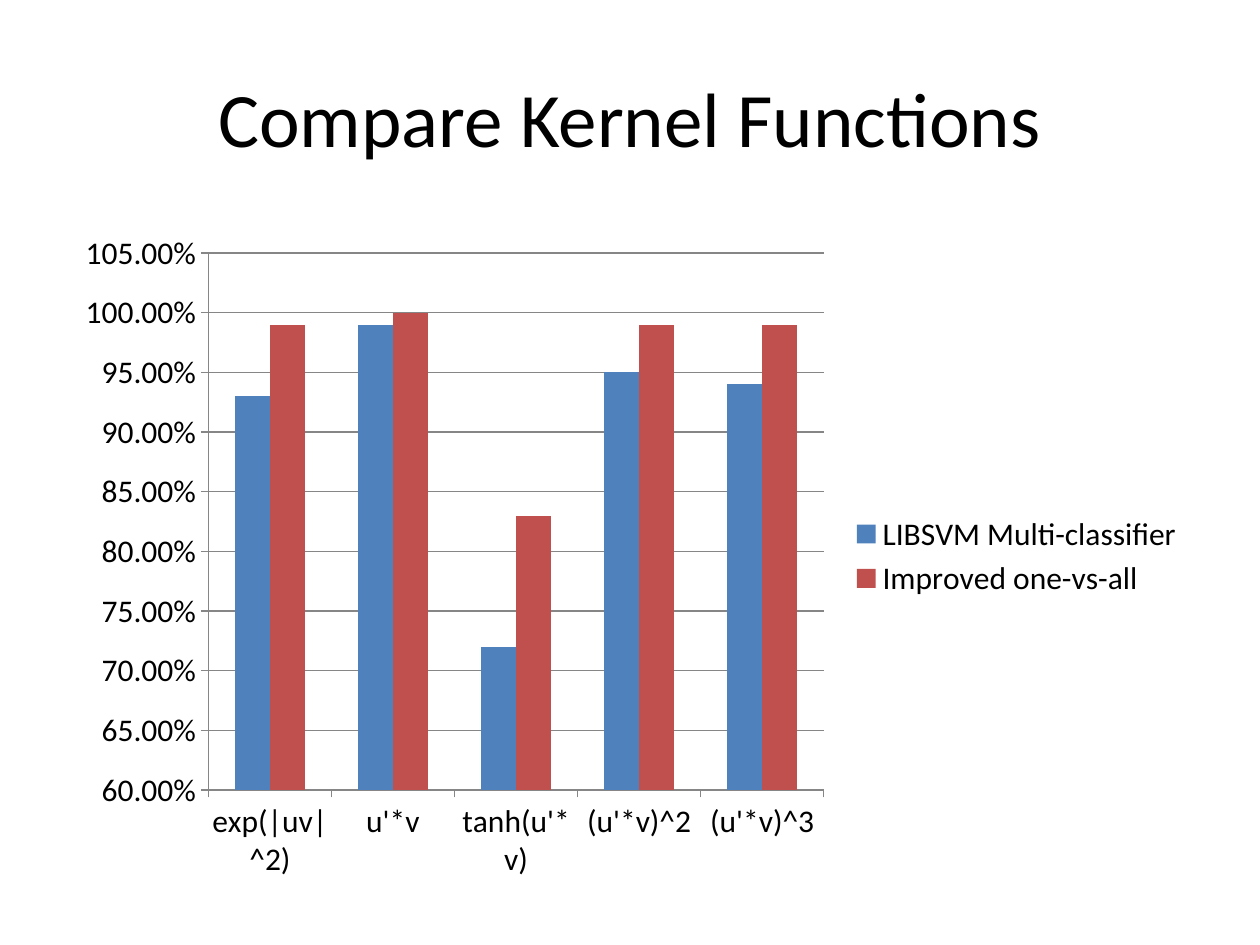
from pptx import Presentation
from pptx import util as u
from pptx.chart import data
from pptx.dml import color
from pptx.enum import chart as kinds, text


def paint(format_part, hex_code):
    format_part.solid()
    format_part.fore_color.rgb = color.RGBColor.from_string(hex_code)


deck = Presentation()
deck.slide_width, deck.slide_height = u.Inches(10), u.Inches(7.5)
page = deck.slides.add_slide(deck.slide_layouts[5])
margin = int(deck.slide_width * 0.05)
content_width = deck.slide_width - 2 * margin

title = page.shapes.title
title.left, title.top = margin, int(deck.slide_height * 0.04)
title.width, title.height = content_width, u.Inches(1.25)
title.text_frame.text = "Compare Kernel Functions"
title.text_frame.vertical_anchor = text.MSO_ANCHOR.MIDDLE
heading = title.text_frame.paragraphs[0]
heading.alignment = text.PP_ALIGN.CENTER
heading.font.name = "Calibri"
heading.font.size = u.Pt(44)
paint(heading.font.fill, "000000")

classifiers = [
    ("LIBSVM Multi-classifier", [0.93, 0.99, 0.72, 0.95, 0.94], "4F81BD"),
    ("Improved one-vs-all", [0.99, 1, 0.83, 0.99, 0.99], "C0504D"),
]
accuracy = data.CategoryChartData(number_format="0.00%")
accuracy.categories = ["exp(|uv|^2)", "u'*v", "tanh(u'*v)", "(u'*v)^2", "(u'*v)^3"]
for name, values, _ in classifiers:
    accuracy.add_series(name, values)

chart = page.shapes.add_chart(
    kinds.XL_CHART_TYPE.COLUMN_CLUSTERED,
    margin, u.Inches(1.75), content_width, u.Inches(5.33), accuracy,
).chart
chart.has_title = False
chart.font.name = "Calibri"
chart.font.size = u.Pt(18)
paint(chart.font.fill, "000000")
chart.has_legend = True
chart.legend.position = kinds.XL_LEGEND_POSITION.RIGHT
chart.legend.include_in_layout = False

plot = chart.plots[0]
plot.gap_width = 150
plot.overlap = 0
plot.vary_by_categories = False
for series, (_, _, fill_color) in zip(plot.series, classifiers):
    paint(series.format.fill, fill_color)
    series.invert_if_negative = False

value_axis = chart.value_axis
value_axis.minimum_scale, value_axis.maximum_scale = 0.6, 1.05
value_axis.major_unit = 0.05
value_axis.has_major_gridlines = True
value_axis.tick_labels.number_format = "0.00%"
value_axis.tick_labels.number_format_is_linked = False
for axis in (value_axis, chart.category_axis):
    axis.major_tick_mark = kinds.XL_TICK_MARK.OUTSIDE
for lines in (value_axis, chart.category_axis, value_axis.major_gridlines):
    paint(lines.format.line.fill, "868686")
    lines.format.line.width = u.Pt(0.75)

deck.save("out.pptx")
